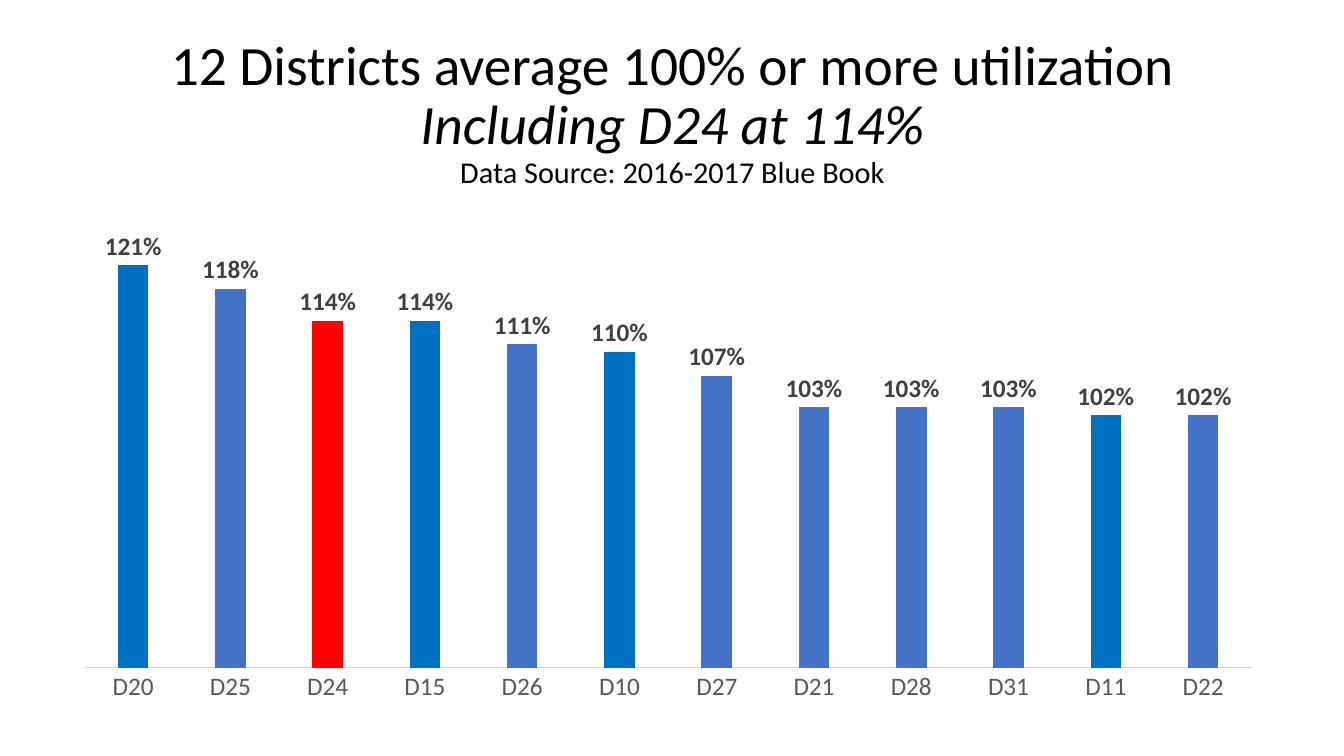
from dataclasses import dataclass

import lxml.etree
import pptx
import pptx.chart.chart
import pptx.chart.data
import pptx.dml.color
import pptx.enum.chart
import pptx.enum.text
import pptx.oxml.ns
import pptx.slide
import pptx.util

FONT = "Calibri"
BLUE = "4472C4"
BRIGHT_BLUE = "0070C0"
RED = "FF0000"


@dataclass
class TitleLine:
    text: str
    size: float
    italic: bool = False


@dataclass
class District:
    name: str
    utilization: float
    color: str = BLUE


TITLE_LINES = [
    TitleLine("12 Districts average 100% or more utilization", 39.6),
    TitleLine("Including D24 at 114%", 39.6, italic=True),
    TitleLine("Data Source: 2016-2017 Blue Book", 21.6),
]

DISTRICTS = [
    District("D20", 1.21, BRIGHT_BLUE),
    District("D25", 1.18),
    District("D24", 1.14, RED),
    District("D15", 1.14, BRIGHT_BLUE),
    District("D26", 1.11),
    District("D10", 1.10, BRIGHT_BLUE),
    District("D27", 1.07),
    District("D21", 1.03),
    District("D28", 1.03),
    District("D31", 1.03),
    District("D11", 1.02, BRIGHT_BLUE),
    District("D22", 1.02),
]


def rgb(color: str) -> pptx.dml.color.RGBColor:
    return pptx.dml.color.RGBColor.from_string(color)


def inches(*lengths: float) -> list[pptx.util.Length]:
    return [pptx.util.Inches(length) for length in lengths]


def write_title(page: pptx.slide.Slide) -> None:
    title = page.shapes.title
    title.left, title.top, title.width, title.height = inches(0.92, 0.4, 11.5, 1.45)
    frame = title.text_frame
    frame.word_wrap = True
    frame.auto_size = pptx.enum.text.MSO_AUTO_SIZE.NONE
    frame.vertical_anchor = pptx.enum.text.MSO_ANCHOR.MIDDLE
    para = frame.paragraphs[0]
    para.alignment = pptx.enum.text.PP_ALIGN.CENTER
    para.line_spacing = 0.9
    para.font.name = FONT
    para.font.size = pptx.util.Pt(TITLE_LINES[0].size)
    para.font.color.rgb = rgb("000000")
    for index, line in enumerate(TITLE_LINES):
        if index:
            para.add_line_break()
        span = para.add_run()
        span.text = line.text
        span.font.size = pptx.util.Pt(line.size)
        span.font.italic = line.italic


def place_plot(chart: pptx.chart.chart.Chart) -> None:
    qn = pptx.oxml.ns.qn
    plot_area = chart.plots[0]._element.getparent()
    layout = plot_area.find(qn("c:layout"))
    if layout is None:
        layout = lxml.etree.Element(qn("c:layout"))
        plot_area.insert(0, layout)
    manual = lxml.etree.SubElement(layout, qn("c:manualLayout"))
    settings = {
        "layoutTarget": "inner", "xMode": "edge", "yMode": "edge",
        "x": "0.026", "y": "0", "w": "0.974", "h": "0.908",
    }
    for name, value in settings.items():
        lxml.etree.SubElement(manual, qn(f"c:{name}")).set("val", value)


def draw_chart(page: pptx.slide.Slide) -> None:
    data = pptx.chart.data.CategoryChartData(number_format="0%")
    data.categories = [district.name for district in DISTRICTS]
    data.add_series("Series 1", [district.utilization for district in DISTRICTS])
    chart = page.shapes.add_chart(
        pptx.enum.chart.XL_CHART_TYPE.COLUMN_CLUSTERED,
        *inches(0.53, 1.93, 11.89, 5.17), data,
    ).chart
    chart.has_legend = False
    chart.has_title = False
    chart.font.name = FONT
    chart.font.size = pptx.util.Pt(18)
    chart.font.color.rgb = rgb("595959")

    values = chart.value_axis
    values.minimum_scale = 0.7
    values.maximum_scale = 1.3
    values.has_major_gridlines = False
    values.visible = False

    names = chart.category_axis
    names.major_tick_mark = pptx.enum.chart.XL_TICK_MARK.NONE
    names.format.line.color.rgb = rgb("D9D9D9")
    names.format.line.width = pptx.util.Pt(0.75)

    plot = chart.plots[0]
    plot.gap_width = 219
    plot.overlap = -27
    plot.vary_by_categories = False
    plot.has_data_labels = True
    labels = plot.data_labels
    labels.show_value = True
    labels.number_format = "0%"
    labels.number_format_is_linked = False
    labels.position = pptx.enum.chart.XL_LABEL_POSITION.OUTSIDE_END
    labels.font.name = FONT
    labels.font.size = pptx.util.Pt(18)
    labels.font.bold = True
    labels.font.color.rgb = rgb("404040")

    bars = plot.series[0]
    bars.format.fill.solid()
    bars.format.fill.fore_color.rgb = rgb(BLUE)
    for index, district in enumerate(DISTRICTS):
        if district.color != BLUE:
            fill = bars.points[index].format.fill
            fill.solid()
            fill.fore_color.rgb = rgb(district.color)
    place_plot(chart)


def main() -> None:
    deck = pptx.Presentation()
    deck.slide_width, deck.slide_height = inches(13.33, 7.5)
    page = deck.slides.add_slide(deck.slide_layouts.get_by_name("Title Only"))
    write_title(page)
    draw_chart(page)
    deck.save("out.pptx")


if __name__ == "__main__":
    main()
